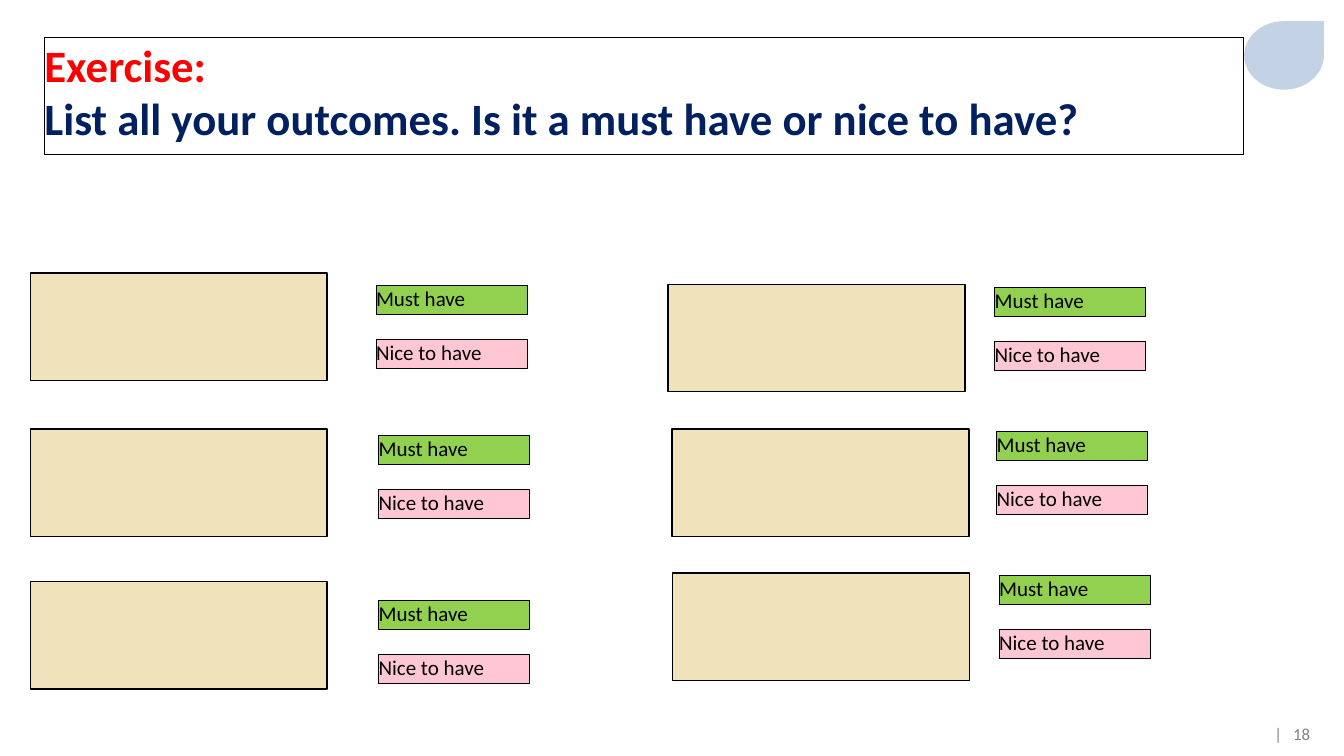
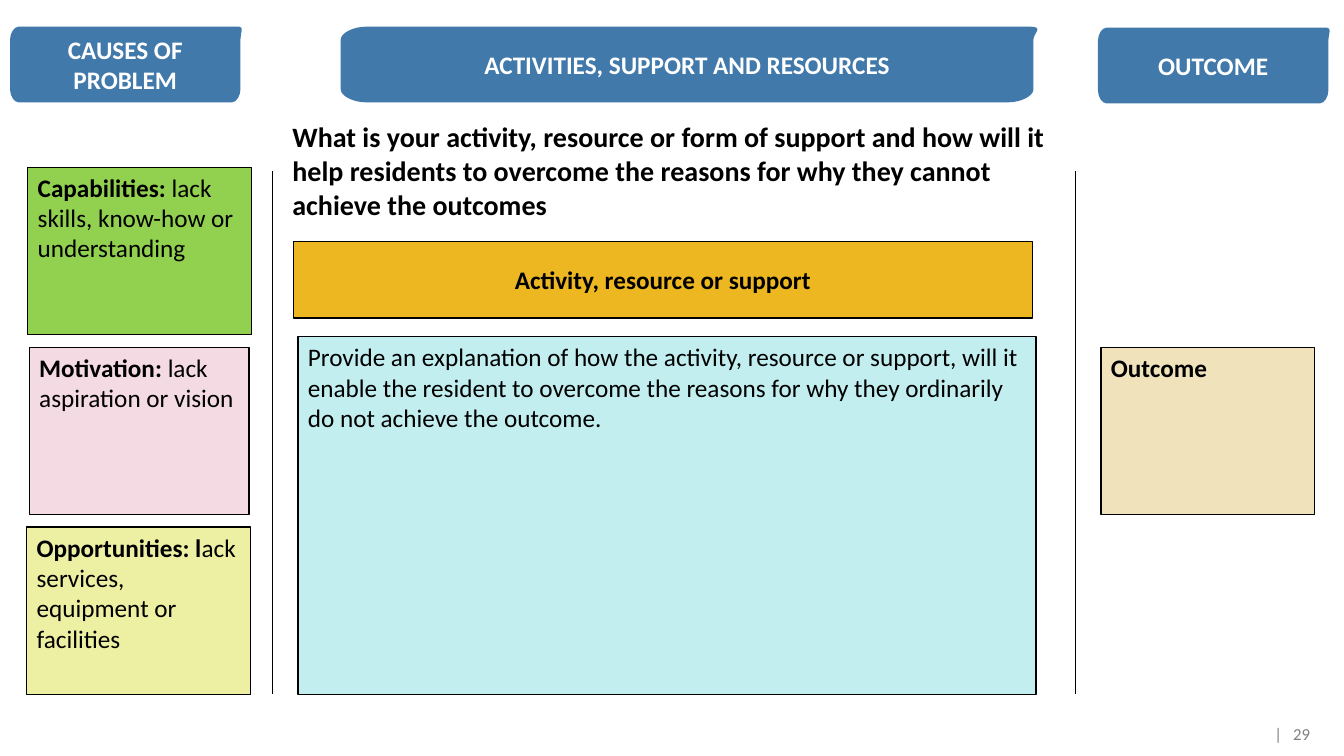
"""Builds two outcome-planning worksheets on a shared grid of tenth-inch cells."""
from dataclasses import dataclass

from lxml.etree import SubElement
from pptx import Presentation
from pptx.dml.color import RGBColor
from pptx.enum.shapes import MSO_CONNECTOR, MSO_SHAPE
from pptx.enum.text import MSO_ANCHOR, PP_ALIGN
from pptx.oxml.ns import qn
from pptx.shapes.autoshape import Shape
from pptx.slide import Slide
from pptx.util import Inches, Length, Pt


@dataclass(frozen=True)
class Theme:
    """Colours, font and type sizes of the deck."""
    font: str = "Calibri"
    ink: str = "000000"
    paper: str = "FFFFFF"
    alert: str = "FF0000"
    navy: str = "002060"
    muted: str = "808080"
    accent: str = "C3D3E5"
    band: str = "4179AA"
    green: str = "92D050"
    pink: str = "FFC7D4"
    rose: str = "F4DAE3"
    sand: str = "F0E3BB"
    yellow: str = "EDEFA2"
    gold: str = "ECB720"
    aqua: str = "C2EEF0"
    title: int = 32
    question: int = 20
    body: int = 18
    choice: int = 15
    footer: int = 12


THEME = Theme()


@dataclass(frozen=True)
class Area:
    """A rectangle in grid columns and rows."""
    column: float
    row: float
    columns: float
    rows: float


@dataclass(frozen=True)
class Span:
    """Text with its own weight and colour, maybe ending its line."""
    text: str
    bold: bool = False
    colour: str = THEME.ink
    ends_line: bool = False


@dataclass(frozen=True)
class OutcomeSlot:
    """Corners of an outcome box and of its pair of choices."""
    column: float
    row: float
    choice_column: float
    choice_row: float


@dataclass(frozen=True)
class Card:
    """A filled box with a text of spans."""
    area: Area
    fill: str
    spans: tuple[Span, ...]
    align: PP_ALIGN = PP_ALIGN.LEFT
    anchor: MSO_ANCHOR = MSO_ANCHOR.TOP


@dataclass(frozen=True)
class Band:
    """A heading band."""
    area: Area
    label: str


CENTRE, MIDDLE = PP_ALIGN.CENTER, MSO_ANCHOR.MIDDLE
PADDING = (1, 0.5, 1, 0.5)
FLUSH = (0, 0, 0, 0)
CHOICES = (("Must have", THEME.green), ("Nice to have", THEME.pink))
CHOICE_STEP = 5.37
OUTCOME_SLOTS = (
    OutcomeSlot(3, 27.1, 37.3, 28.3),
    OutcomeSlot(3, 42.55, 37.55, 43.2),
    OutcomeSlot(3, 57.7, 37.55, 59.55),
    OutcomeSlot(66.25, 28.2, 98.65, 28.5),
    OutcomeSlot(66.65, 42.55, 98.85, 42.8),
    OutcomeSlot(66.7, 56.85, 99.1, 57.1),
)
BANDS = (
    Band(Area(108.9, 2.75, 22.85, 7.5), "OUTCOME"),
    Band(Area(1, 2.65, 22.85, 7.5), "CAUSES OF PROBLEM"),
    Band(Area(33.8, 2.65, 68.7, 7.5), "ACTIVITIES, SUPPORT AND RESOURCES"),
)
CARDS = (
    Card(Area(29.1, 23.95, 73.3, 7.6), THEME.gold,
         (Span("Activity, resource or support", True),), CENTRE, MIDDLE),
    Card(Area(29.55, 33.4, 73.2, 35.5), THEME.aqua,
         (Span("Provide an explanation of how the activity, resource or support, will it "
               "enable the resident to overcome the reasons for why they ordinarily "
               "do not achieve the outcome."),)),
    Card(Area(2.75, 16.6, 22.2, 16.6), THEME.green,
         (Span("Capabilities:", True), Span(" lack skills, know-how or understanding"))),
    Card(Area(2.9, 34.45, 21.8, 16.6), THEME.rose,
         (Span("Motivation: ", True), Span("lack aspiration or vision"))),
    Card(Area(2.65, 52.3, 22.2, 16.6), THEME.yellow,
         (Span("Opportunities: l", True), Span("ack services, equipment or facilities"))),
    Card(Area(109.2, 34.45, 21.2, 16.6), THEME.sand, (Span("Outcome", True),)),
)


def cells(count: float) -> Length:
    """Convert grid cells to a length."""
    return Inches(count / 10)


def place(area: Area) -> tuple[Length, Length, Length, Length]:
    """Convert an area to left, top, width and height."""
    return cells(area.column), cells(area.row), cells(area.columns), cells(area.rows)


def write_text(box: Shape, *spans: Span, size: int, align: PP_ALIGN = PP_ALIGN.LEFT,
               anchor: MSO_ANCHOR = MSO_ANCHOR.TOP,
               insets: tuple[float, ...] = PADDING, tab: float = 0) -> None:
    """Fill a box with one paragraph of formatted spans."""
    frame = box.text_frame
    frame.word_wrap = True
    frame.vertical_anchor = anchor
    (frame.margin_left, frame.margin_top,
     frame.margin_right, frame.margin_bottom) = map(cells, insets)
    para = frame.paragraphs[0]
    para.alignment = align
    if tab:
        stops = SubElement(para._p.get_or_add_pPr(), qn("a:tabLst"))
        SubElement(stops, qn("a:tab"), pos=str(cells(tab)), algn="l")
    for span in spans:
        run = para.add_run()
        run.text = span.text
        run.font.name = THEME.font
        run.font.size = Pt(size)
        run.font.bold = span.bold
        run.font.color.rgb = RGBColor.from_string(span.colour)
        if span.ends_line:
            para.add_line_break()


def paint(box: Shape, fill: str | None, outline: float = 0) -> None:
    """Set the fill and outline of a shape."""
    box.shadow.inherit = False
    if fill:
        box.fill.solid()
        box.fill.fore_color.rgb = RGBColor.from_string(fill)
    else:
        box.fill.background()
    if outline:
        box.line.color.rgb = RGBColor.from_string(THEME.ink)
        box.line.width = Pt(outline)
    else:
        box.line.fill.background()


def add_box(page: Slide, area: Area, fill: str | None, outline: float = 0,
            preset: MSO_SHAPE = MSO_SHAPE.RECTANGLE) -> Shape:
    """Draw a preset shape."""
    box = page.shapes.add_shape(preset, *place(area))
    paint(box, fill, outline)
    return box


def add_divider(page: Slide, column: float, top: float, bottom: float) -> None:
    """Draw a thin vertical rule."""
    rule = page.shapes.add_connector(MSO_CONNECTOR.STRAIGHT, cells(column), cells(top),
                                     cells(column), cells(bottom))
    rule.line.color.rgb = RGBColor.from_string(THEME.ink)
    rule.line.width = Pt(0.5)
    SubElement(rule._element.spPr, qn("a:effectLst"))


def add_band(page: Slide, band: Band) -> None:
    """Draw a heading band with three round corners and a flared one."""
    across, down = 0.036, 0.17
    corners = (
        ((0, down), (0, down / 2), (across / 2, 0), (across, 0)),
        ((0.995, 0), (1.016, 0), (1, down / 2), (1, down)),
        ((1, 1 - down), (1, 1 - down / 2), (1 - across / 2, 1), (1 - across, 1)),
        ((across, 1), (across / 2, 1), (0, 1 - down / 2), (0, 1 - down)),
    )
    left, top, width, height = place(band.area)
    points = [(round(left + x * width), round(top + y * height))
              for corner in corners for x, y in (corner[0], corner[-1])]
    builder = page.shapes.build_freeform(*points[0])
    builder.add_line_segments(points[1:], close=True)
    box = builder.convert_to_shape()
    segments = list(box._element.iter(qn("a:lnTo")))
    for corner, segment in zip(corners, segments[::2]):
        segment.tag = qn("a:cubicBezTo")
        segment.remove(segment[0])
        for x, y in corner[1:]:
            SubElement(segment, qn("a:pt"), x=str(round(x * width)), y=str(round(y * height)))
    paint(box, THEME.band)
    write_text(box, Span(band.label, True, THEME.paper), size=THEME.body,
               align=CENTRE, anchor=MIDDLE)


def add_footer(page: Slide, number: int) -> None:
    """Write the page number after its bar."""
    box = page.shapes.add_textbox(*place(Area(121.5, 72.05, 8.5, 1.5)))
    write_text(box, Span(f"|\t{number}", colour=THEME.muted), size=THEME.footer,
               anchor=MIDDLE, insets=(4.9, 0.5, 0, 0.5), tab=1.85)


def build_exercise(page: Slide) -> None:
    """Draw the outcome-sorting exercise."""
    title = add_box(page, Area(4.4, 3.7, 118.95, 11.6), None, 0.75)
    write_text(title, Span("Exercise: ", True, THEME.alert, ends_line=True),
               Span("List all your outcomes. Is it a must have or nice to have?",
                    True, THEME.navy), size=THEME.title, insets=FLUSH)
    add_box(page, Area(123.4, 2.1, 7.9, 6.8), THEME.accent, preset=MSO_SHAPE.TEAR)
    for slot in OUTCOME_SLOTS:
        for index, (label, fill) in enumerate(CHOICES):
            row = slot.choice_row + index * CHOICE_STEP
            choice = add_box(page, Area(slot.choice_column, row, 15, 2.9), fill, 0.75)
            write_text(choice, Span(label), size=THEME.choice, insets=FLUSH)
    for slot in OUTCOME_SLOTS:
        add_box(page, Area(slot.column, slot.row, 29.45, 10.65), THEME.sand, 1)


def build_activity(page: Slide) -> None:
    """Draw the path from causes through activities to the outcome."""
    for column in (106.7, 27.05):
        add_divider(page, column, 17, 68.9)
    question = page.shapes.add_textbox(*place(Area(29, 11.9, 75.2, 11.6)))
    write_text(question, Span(
        "What is your activity, resource or form of support and how will it help residents "
        "to overcome the reasons for why they cannot achieve the outcomes", True),
        size=THEME.question, insets=FLUSH)
    for band in BANDS:
        add_band(page, band)
    for card in CARDS:
        box = add_box(page, card.area, card.fill, 1)
        write_text(box, *card.spans, size=THEME.body, align=card.align, anchor=card.anchor)


def main() -> None:
    """Build and save the deck."""
    deck = Presentation()
    deck.slide_width, deck.slide_height = Inches(13.33), Inches(7.5)
    for build, number in ((build_exercise, 18), (build_activity, 29)):
        page = deck.slides.add_slide(deck.slide_layouts[6])
        build(page)
        add_footer(page, number)
    deck.save("out.pptx")


if __name__ == "__main__":
    main()
